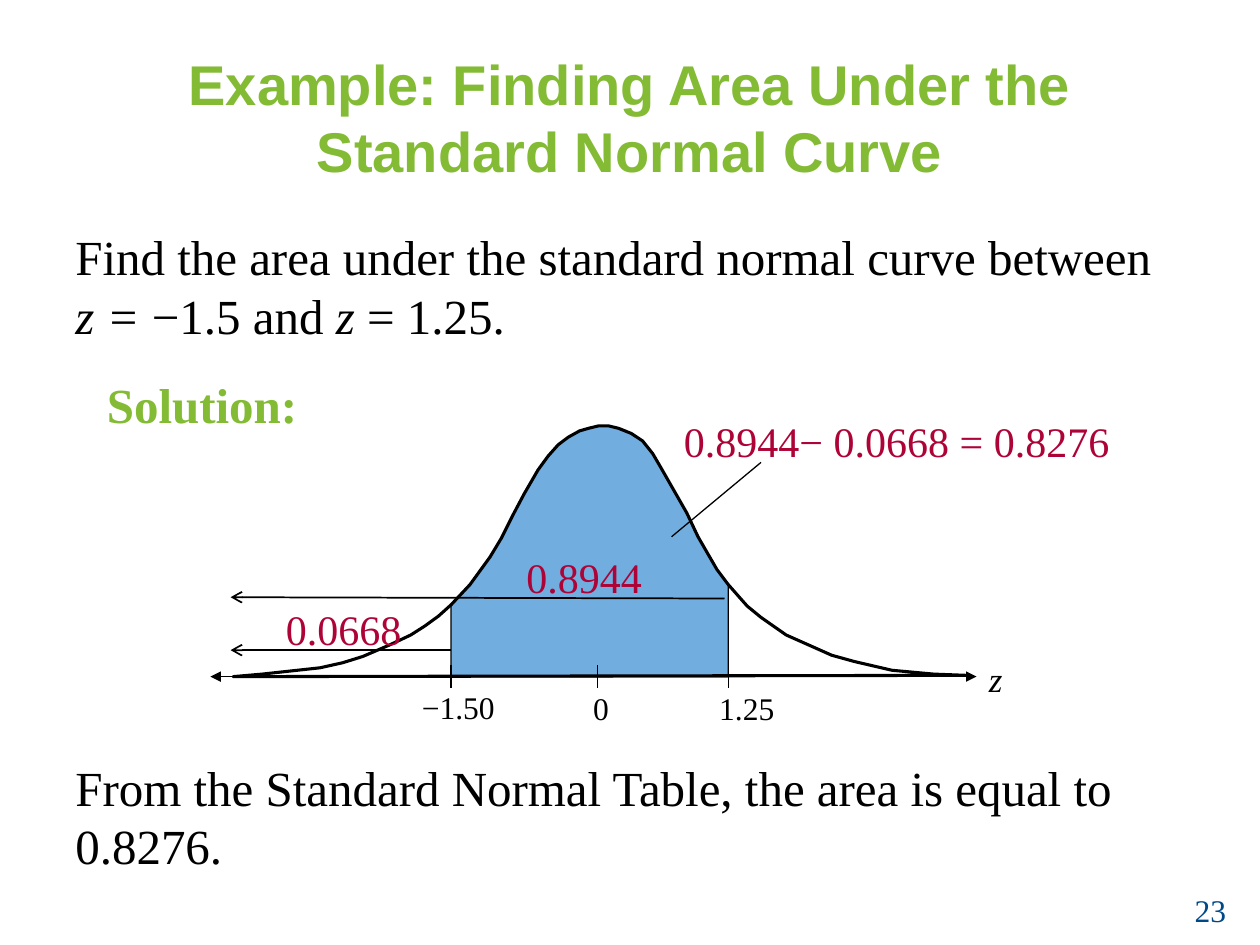
from dataclasses import dataclass

from pptx import Presentation
from pptx.dml.color import RGBColor
from pptx.enum.shapes import MSO_CONNECTOR
from pptx.enum.text import MSO_ANCHOR, PP_ALIGN
from pptx.oxml.ns import qn
from pptx.util import Inches, Pt

LEFT, CENTER, RIGHT = PP_ALIGN.LEFT, PP_ALIGN.CENTER, PP_ALIGN.RIGHT
TOP, MIDDLE = MSO_ANCHOR.TOP, MSO_ANCHOR.MIDDLE
STRAIGHT = MSO_CONNECTOR.STRAIGHT

BLACK, GREEN, RED, BLUE, NAVY = "000000", "83BB35", "AE0337", "71ADDF", "004988"
SERIF, SANS = "Times New Roman", "Arial"

AXIS_Y = 5.37
Z_LOW, Z_MEAN, Z_HIGH = 3.58, 4.74, 5.78  # horizontal places of the z values
Point = tuple[float, float]

# Corners of the bell curve
BELL: list[Point] = [
    (1.85, 5.37), (2.08, 5.35), (2.54, 5.3), (2.72, 5.26), (2.88, 5.21),
    (3.09, 5.12), (3.26, 5.04), (3.37, 4.97), (3.48, 4.89), (Z_LOW, 4.8),
    (3.73, 4.64), (3.89, 4.42), (3.98, 4.27), (4.07, 4.09), (4.16, 3.92),
    (4.27, 3.73), (4.35, 3.62), (4.43, 3.53), (4.51, 3.47), (4.6, 3.42),
    (4.67, 3.4), (4.75, 3.38), (4.83, 3.38), (4.91, 3.4), (5.01, 3.44),
    (5.1, 3.5), (5.18, 3.6), (5.25, 3.72), (5.45, 4.07), (5.54, 4.26),
    (5.69, 4.52), (Z_HIGH, 4.64), (5.93, 4.81), (6.04, 4.9), (6.24, 5.04),
    (6.42, 5.12), (6.6, 5.2), (6.78, 5.25), (7.08, 5.32), (7.41, 5.35),
    (7.67, 5.36),
]


@dataclass
class Run:
    text: str
    italic: bool = False


@dataclass
class Label:
    x: float
    y: float
    w: float
    h: float
    runs: list[Run]
    size: int
    color: str = BLACK
    font: str = SERIF
    bold: bool = False
    align: PP_ALIGN = LEFT
    anchor: MSO_ANCHOR = TOP
    wrap: bool = True


@dataclass
class Line:
    start: Point
    end: Point
    width: float = 0.75
    head: str = ""
    tail: str = ""


def rgb(color: str) -> RGBColor:
    return RGBColor.from_string(color)


def add_label(shapes, label: Label) -> None:
    box = (Inches(v) for v in (label.x, label.y, label.w, label.h))
    tf = shapes.add_textbox(*box).text_frame
    tf.word_wrap = label.wrap
    tf.vertical_anchor = label.anchor
    p = tf.paragraphs[0]
    p.alignment = label.align
    for run in label.runs:
        r = p.add_run()
        r.text = run.text
        r.font.name = label.font
        r.font.size = Pt(label.size)
        r.font.bold = label.bold
        r.font.italic = run.italic
        r.font.color.rgb = rgb(label.color)


def add_line(shapes, line: Line) -> None:
    ends = (Inches(v) for v in (*line.start, *line.end))
    sp = shapes.add_connector(STRAIGHT, *ends)
    sp.line.color.rgb = rgb(BLACK)
    sp.line.width = Pt(line.width)
    props = sp._element.spPr
    ln = props.find(qn("a:ln"))
    for tag, kind in (("a:headEnd", line.head), ("a:tailEnd", line.tail)):
        if kind:
            ln.append(ln.makeelement(qn(tag), {"type": kind}))
    props.append(props.makeelement(qn("a:effectLst"), {}))


def add_outline(shapes, points: list[Point], width: float, fill: str = "") -> None:
    corners = [(Inches(x), Inches(y)) for x, y in points]
    builder = shapes.build_freeform(*corners[0], scale=1.0)
    builder.add_line_segments(corners[1:], close=True)
    sp = builder.convert_to_shape()
    sp.shadow.inherit = False
    if fill:
        sp.fill.solid()
        sp.fill.fore_color.rgb = rgb(fill)
    else:
        sp.fill.background()
    sp.line.color.rgb = rgb(BLACK)
    sp.line.width = Pt(width)


def tick(x: float) -> Line:
    return Line((x, AXIS_Y - 0.09), (x, AXIS_Y + 0.09))


LABELS = [
    # Title and body text
    Label(0.5, 0.3, 9, 1.25,
          [Run("Example: Finding Area Under the Standard Normal Curve")],
          32, GREEN, SANS, bold=True, align=CENTER, anchor=MIDDLE),
    Label(0.5, 1.75, 8.83, 1.17,
          [Run("Find the area under the standard normal curve between "),
           Run("z = ", True), Run("−1.5 and "), Run("z", True), Run(" = 1.25.")], 28),
    Label(0.75, 2.92, 2.92, 0.57, [Run("Solution:")], 28, GREEN, bold=True),
    Label(0.5, 5.96, 8.75, 1.04,
          [Run("From the Standard Normal Table, the area is equal to 0.8276.")], 28),
    # Axis labels
    Label(3.25, 5.41, 0.78, 0.4, [Run("−1.50")], 18, wrap=False),
    Label(4.61, 5.42, 0.33, 0.4, [Run("0")], 18, wrap=False),
    Label(5.61, 5.42, 0.64, 0.4, [Run("1.25")], 18, wrap=False),
    Label(7.75, 5.17, 0.46, 0.44, [Run("z", True)], 20),
    # Areas
    Label(4.08, 4.33, 1.13, 0.51, [Run("0.8944")], 24, RED, wrap=False),
    Label(2.17, 4.74, 1.13, 0.51, [Run("0.0668")], 24, RED, wrap=False),
    Label(5.33, 3.25, 4.17, 0.51, [Run("0.8944− 0.0668 = 0.8276")], 24, RED),
    # Slide number
    Label(7.5, 7.02, 2.33, 0.4, [Run("23")], 18, NAVY, align=RIGHT),
]

LINES = [
    # Axis and ticks
    Line((1.67, AXIS_Y), (7.75, AXIS_Y), head="triangle", tail="triangle"),
    *(tick(x) for x in (Z_LOW, Z_MEAN, Z_HIGH)),
    # Arrows over the areas to the left of each z value
    Line((5.75, 4.75), (1.83, 4.74), 1, tail="arrow"),
    Line((Z_LOW, 5.16), (1.83, 5.16), 1, tail="arrow"),
    # Leader to the shaded area
    Line((6.04, 3.67), (5.33, 4.26)),
]


def main() -> None:
    prs = Presentation()
    prs.slide_width, prs.slide_height = Inches(10), Inches(7.5)
    shapes = prs.slides.add_slide(prs.slide_layouts[6]).shapes

    # Shaded area under the bell curve
    between = [pt for pt in BELL if Z_LOW <= pt[0] <= Z_HIGH]
    base = [(Z_HIGH, AXIS_Y), (Z_LOW, AXIS_Y)]
    add_outline(shapes, between + base, 0.75, BLUE)
    add_outline(shapes, BELL, 1.75)

    for line in LINES:
        add_line(shapes, line)
    for label in LABELS:
        add_label(shapes, label)
    prs.save("out.pptx")


if __name__ == "__main__":
    main()
